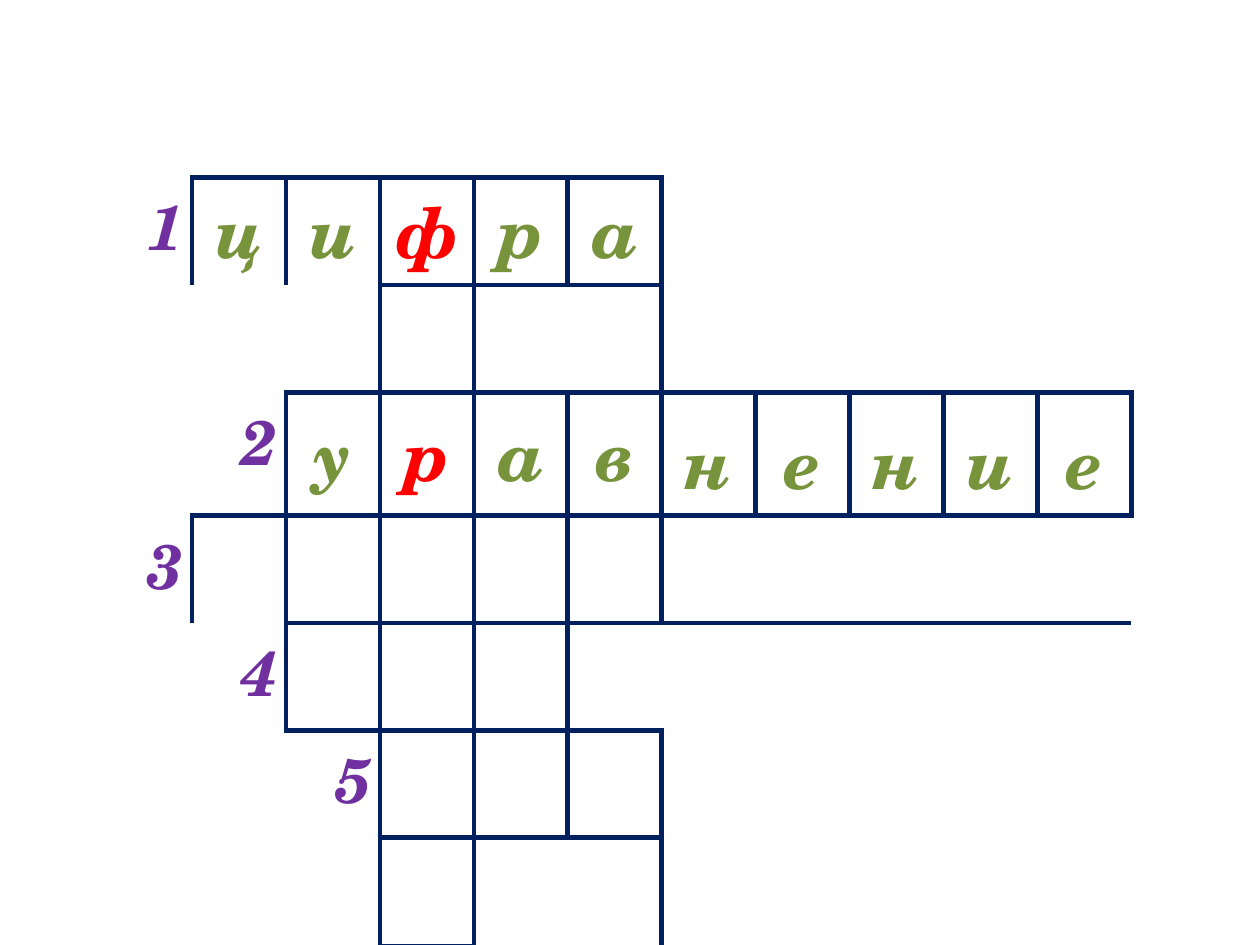
from lxml import etree
from pptx import Presentation
from pptx.dml.color import RGBColor
from pptx.enum.text import MSO_ANCHOR, PP_ALIGN
from pptx.oxml.ns import qn
from pptx.util import Inches, Pt

FONT = "TeX Gyre Schola"
COLORS = {"grid": "002060", "number": "7030A0", "letter": "77933C", "key": "FF0000"}
ROW_HEIGHTS = [0.83, 0.75, 0.75, 0.79, 0.75, 0.82, 0.86]
COLUMN_COUNT = 11
KEY_COLUMN = 3
NO_STYLE = "{2D5ABB26-0587-4C30-8999-92F81FD0307C}"
SIDES = {"left": "a:lnL", "right": "a:lnR", "top": "a:lnT", "bottom": "a:lnB"}

# row, column, rows spanned, columns spanned, sides drawn
OPEN_CELLS = [
    (0, 0, 1, 1, ["right"]),
    (0, 6, 2, 4, ["left", "bottom"]),
    (0, 10, 2, 1, ["bottom"]),
    (1, 0, 1, 3, ["right"]),
    (1, 4, 1, 2, ["left", "top", "bottom"]),
    (2, 0, 1, 2, ["right"]),
    (3, 0, 1, 1, ["right"]),
    (3, 6, 1, 5, ["left", "top"]),
    (4, 0, 1, 2, ["right"]),
    (4, 5, 1, 6, ["left", "top", "bottom"]),
    (5, 0, 1, 2, []),
    (5, 2, 2, 1, ["top", "right"]),
    (5, 6, 2, 5, ["left"]),
    (6, 0, 1, 2, []),
    (6, 4, 1, 2, ["left", "top"]),
]
NUMBERS = [("1", 0, 0), ("2", 2, 0), ("3", 3, 0), ("4", 4, 0), ("5", 5, 2)]
WORDS = [("цифра", 0, 1), ("уравнение", 2, 2)]
LOOSE_CELLS = [(2, column) for column in range(6, COLUMN_COUNT)]


def add_grid(page):
    frame = page.shapes.add_table(
        len(ROW_HEIGHTS), COLUMN_COUNT,
        Inches(0.78), Inches(1.41), Inches(8.2), Inches(sum(ROW_HEIGHTS)))
    table = frame.table
    table.first_row = table.horz_banding = False
    table._tbl.tblPr.find(qn("a:tableStyleId")).text = NO_STYLE
    for row, height in zip(table.rows, ROW_HEIGHTS):
        row.height = Inches(height)
    return table


def set_borders(cell, drawn):
    properties = cell._tc.get_or_add_tcPr()
    for side, tag in SIDES.items():
        line = etree.SubElement(properties, qn(tag), w=str(Pt(3)))
        if side in drawn:
            fill = etree.SubElement(line, qn("a:solidFill"))
            etree.SubElement(fill, qn("a:srgbClr"), val=COLORS["grid"])
        else:
            etree.SubElement(line, qn("a:noFill"))
    cell.fill.background()


def style_cell(cell):
    cell.margin_left = cell.margin_right = Inches(0.07)
    cell.margin_top = cell.margin_bottom = 0
    cell.vertical_anchor = MSO_ANCHOR.MIDDLE
    set_font(cell.text_frame.paragraphs[0], 40, "letter")


def set_font(para, size, color):
    font = para.font
    font.name, font.size = FONT, Pt(size)
    font.bold = font.italic = True
    font.color.rgb = RGBColor.from_string(COLORS[color])


def write_number(cell, number):
    cell.text = number
    cell.vertical_anchor = MSO_ANCHOR.TOP
    para = cell.text_frame.paragraphs[0]
    para.alignment = PP_ALIGN.RIGHT
    set_font(para, 36, "number")


def write_word(table, word, row, start):
    for column, letter in enumerate(word, start):
        cell = table.cell(row, column)
        cell.text = letter
        para = cell.text_frame.paragraphs[0]
        para.alignment = PP_ALIGN.CENTER
        if (row, column) in LOOSE_CELLS:
            para.line_spacing = 1.15
        set_font(para, 40, "key" if column == KEY_COLUMN else "letter")


def main():
    deck = Presentation()
    deck.slide_width, deck.slide_height = Inches(10), Inches(7.5)
    page = deck.slides.add_slide(deck.slide_layouts[6])
    table = add_grid(page)
    open_sides = {}
    for row, column, height, width, sides in OPEN_CELLS:
        open_sides[row, column] = sides
        if height * width > 1:
            last = table.cell(row + height - 1, column + width - 1)
            table.cell(row, column).merge(last)
    for row in range(len(ROW_HEIGHTS)):
        for column in range(COLUMN_COUNT):
            cell = table.cell(row, column)
            style_cell(cell)
            if not cell.is_spanned:
                set_borders(cell, open_sides.get((row, column), SIDES))
    for number, row, column in NUMBERS:
        write_number(table.cell(row, column), number)
    for word, row, start in WORDS:
        write_word(table, word, row, start)
    deck.save("out.pptx")


if __name__ == "__main__":
    main()
